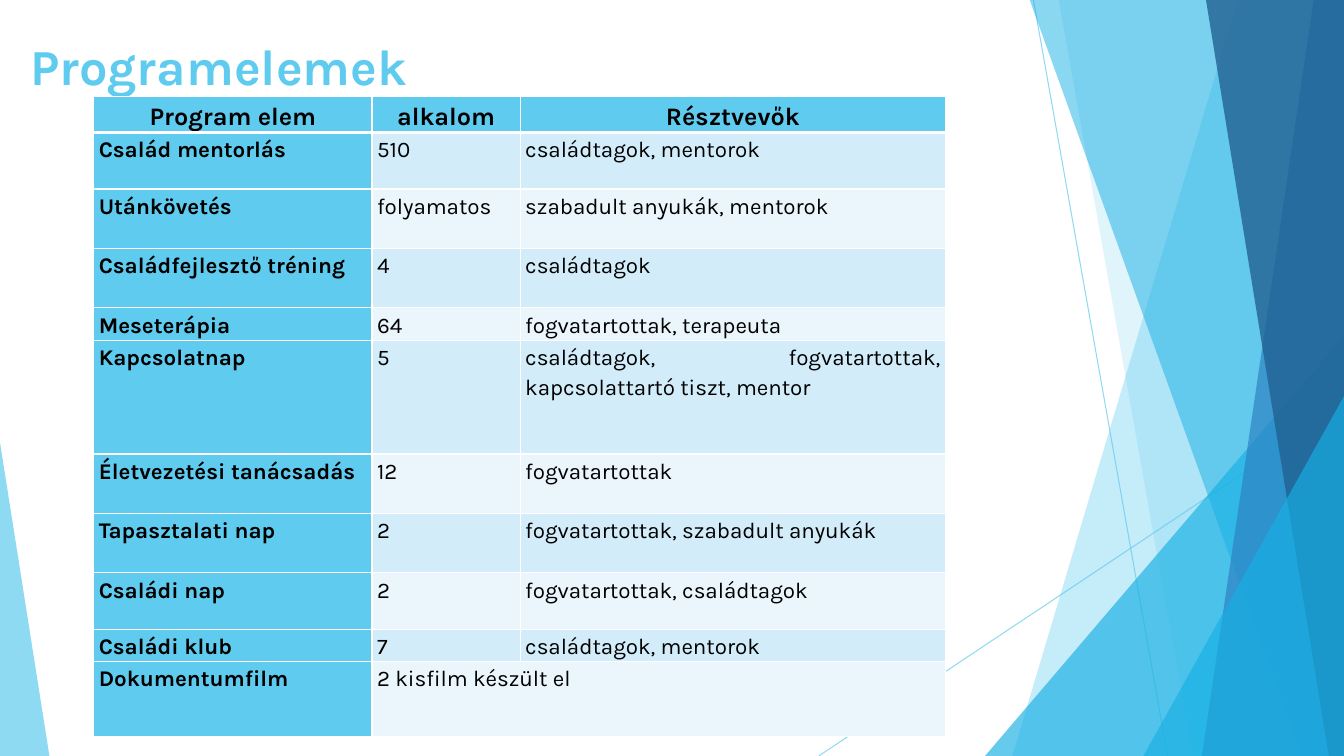
from dataclasses import dataclass

from lxml import etree
from pptx import Presentation
from pptx.dml.color import RGBColor
from pptx.enum.shapes import MSO_CONNECTOR, MSO_SHAPE
from pptx.enum.text import MSO_ANCHOR, PP_ALIGN
from pptx.oxml.ns import qn
from pptx.util import Pt

PX = 9144
WIDE, HIGH = 1333, 750
STRAIGHT = MSO_CONNECTOR.STRAIGHT
TRIANGLE = MSO_SHAPE.ISOSCELES_TRIANGLE
TOP = MSO_ANCHOR.TOP
LEFT, CENTER, JUSTIFY = PP_ALIGN.LEFT, PP_ALIGN.CENTER, PP_ALIGN.JUSTIFY


@dataclass(frozen=True)
class Theme:
    font: str = "Karla"
    sky: str = "5FCBEF"
    cyan: str = "17B0E4"
    blue: str = "2E83C3"
    navy: str = "226292"
    odd: str = "D2ECF9"
    even: str = "EAF6FC"
    white: str = "FFFFFF"
    black: str = "000000"
    title: int = 36
    head: int = 18
    body: int = 16


@dataclass(frozen=True)
class Ray:
    start: tuple[int, int]
    end: tuple[int, int]


@dataclass(frozen=True)
class Facet:
    top: int
    foot: int
    color: str
    alpha: int


@dataclass(frozen=True)
class Wedge:
    left: int
    top: int
    width: int
    apex: int
    color: str
    alpha: int


@dataclass(frozen=True)
class Row:
    height: int
    texts: tuple[str, ...]


LOOK = Theme()

RAYS = (Ray((1025, 0), (1158, HIGH)), Ray((WIDE, 403), (812, HIGH)))

DECOR = (
    Facet(1228, 1004, LOOK.sky, 36),
    Facet(1050, 1183, LOOK.sky, 20),
    Wedge(977, 333, 356, 1, LOOK.cyan, 66),
    Facet(1021, 1291, LOOK.cyan, 50),
    Facet(1303, 1192, LOOK.blue, 70),
    Facet(1196, 1318, LOOK.navy, 80),
    Wedge(1134, 393, 199, 1, LOOK.cyan, 66),
    Wedge(0, 439, 49, 0, LOOK.sky, 70),
)

COLUMNS = (276, 147, 422)
ROWS = (
    Row(32, ("Program elem", "alkalom", "Résztvevők")),
    Row(56, ("Család mentorlás", "510", "családtagok, mentorok")),
    Row(59, ("Utánkövetés", "folyamatos", "szabadult anyukák, mentorok")),
    Row(59, ("Családfejlesztő tréning", "4", "családtagok")),
    Row(32, ("Meseterápia", "64", "fogvatartottak, terapeuta")),
    Row(113, ("Kapcsolatnap", "5",
              "családtagok, fogvatartottak, kapcsolattartó tiszt, mentor")),
    Row(59, ("Életvezetési tanácsadás", "12", "fogvatartottak")),
    Row(59, ("Tapasztalati nap", "2", "fogvatartottak, szabadult anyukák")),
    Row(56, ("Családi nap", "2", "fogvatartottak, családtagok")),
    Row(32, ("Családi klub", "7", "családtagok, mentorok")),
    Row(74, ("Dokumentumfilm", "2 kisfilm készült el")),
)


def fade(part, alpha: int) -> None:
    for color in part.iter(qn("a:srgbClr")):
        etree.SubElement(color, qn("a:alpha"), val=str(alpha * 1000))


def write(frame, text: str, *, size: int, color: str, bold: bool = False,
          align=LEFT, spacing: float = 1.0, after: int = 0) -> None:
    para = frame.paragraphs[0]
    para.alignment = align
    para.line_spacing = spacing
    para.space_after = Pt(after)
    run = para.add_run()
    run.text = text
    run.font.name = LOOK.font
    run.font.size = Pt(size)
    run.font.bold = bold
    run.font.color.rgb = RGBColor.from_string(color)


def draw_ray(shapes, ray: Ray) -> None:
    line = shapes.add_connector(STRAIGHT, *(n * PX for n in ray.start + ray.end))
    line.line.color.rgb = RGBColor.from_string(LOOK.sky)
    line.line.width = Pt(0.75)
    props = line._element.spPr
    fade(props, 70)
    etree.SubElement(props, qn("a:effectLst"))


def draw_decor(shapes, item: Facet | Wedge) -> None:
    if isinstance(item, Facet):
        path = shapes.build_freeform(item.top, -1, scale=PX)
        path.add_line_segments(((WIDE, -1), (WIDE, HIGH), (item.foot, HIGH)))
        shape = path.convert_to_shape()
    else:
        shape = shapes.add_shape(TRIANGLE, item.left * PX, item.top * PX,
                                 item.width * PX, (HIGH - item.top) * PX)
        shape.adjustments[0] = item.apex
    shape.shadow.inherit = False
    shape.line.fill.background()
    shape.fill.solid()
    shape.fill.fore_color.rgb = RGBColor.from_string(item.color)
    fade(shape._element.spPr, item.alpha)


def draw_title(shapes) -> None:
    box = shapes.add_textbox(20 * PX, 26 * PX, 940 * PX, 47 * PX)
    frame = box.text_frame
    frame.word_wrap = True
    frame.vertical_anchor = TOP
    frame.margin_top = 9 * PX
    write(frame, "Programelemek", size=LOOK.title, color=LOOK.sky, bold=True)


def edge_cell(cell, row: int) -> None:
    props = cell._tc.get_or_add_tcPr()
    for side in "LRTB":
        thick = (row, side) in ((0, "B"), (1, "T"))
        line = etree.SubElement(props, qn(f"a:ln{side}"), w=str(Pt(3 if thick else 1)))
        fill = etree.SubElement(line, qn("a:solidFill"))
        etree.SubElement(fill, qn("a:srgbClr"), val=LOOK.white)


def fill_cell(cell, text: str, row: int, column: int) -> None:
    edge_cell(cell, row)
    lead = row == 0 or column == 0
    band = LOOK.odd if row % 2 else LOOK.even
    cell.fill.solid()
    cell.fill.fore_color.rgb = RGBColor.from_string(LOOK.sky if lead else band)
    cell.margin_left = cell.margin_right = 5 * PX
    cell.margin_top, cell.margin_bottom = PX, 0
    if text:
        write(cell.text_frame, text, size=LOOK.body if row else LOOK.head,
              color=LOOK.black, bold=lead, align=JUSTIFY if row else CENTER,
              spacing=1.15, after=10)


def draw_table(shapes) -> None:
    height = sum(row.height for row in ROWS)
    grid = shapes.add_table(len(ROWS), len(COLUMNS), 93 * PX, 96 * PX,
                            sum(COLUMNS) * PX, height * PX).table
    for column, width in zip(grid.columns, COLUMNS):
        column.width = width * PX
    for y, row in enumerate(ROWS):
        grid.rows[y].height = row.height * PX
        if len(row.texts) < len(COLUMNS):
            grid.cell(y, len(row.texts) - 1).merge(grid.cell(y, len(COLUMNS) - 1))
        for x in range(len(COLUMNS)):
            text = row.texts[x] if x < len(row.texts) else ""
            fill_cell(grid.cell(y, x), text, y, x)


def main() -> None:
    deck = Presentation()
    deck.slide_width, deck.slide_height = WIDE * PX, HIGH * PX
    shapes = deck.slides.add_slide(deck.slide_layouts[6]).shapes
    for ray in RAYS:
        draw_ray(shapes, ray)
    for item in DECOR:
        draw_decor(shapes, item)
    draw_title(shapes)
    draw_table(shapes)
    deck.save("out.pptx")


if __name__ == "__main__":
    main()
